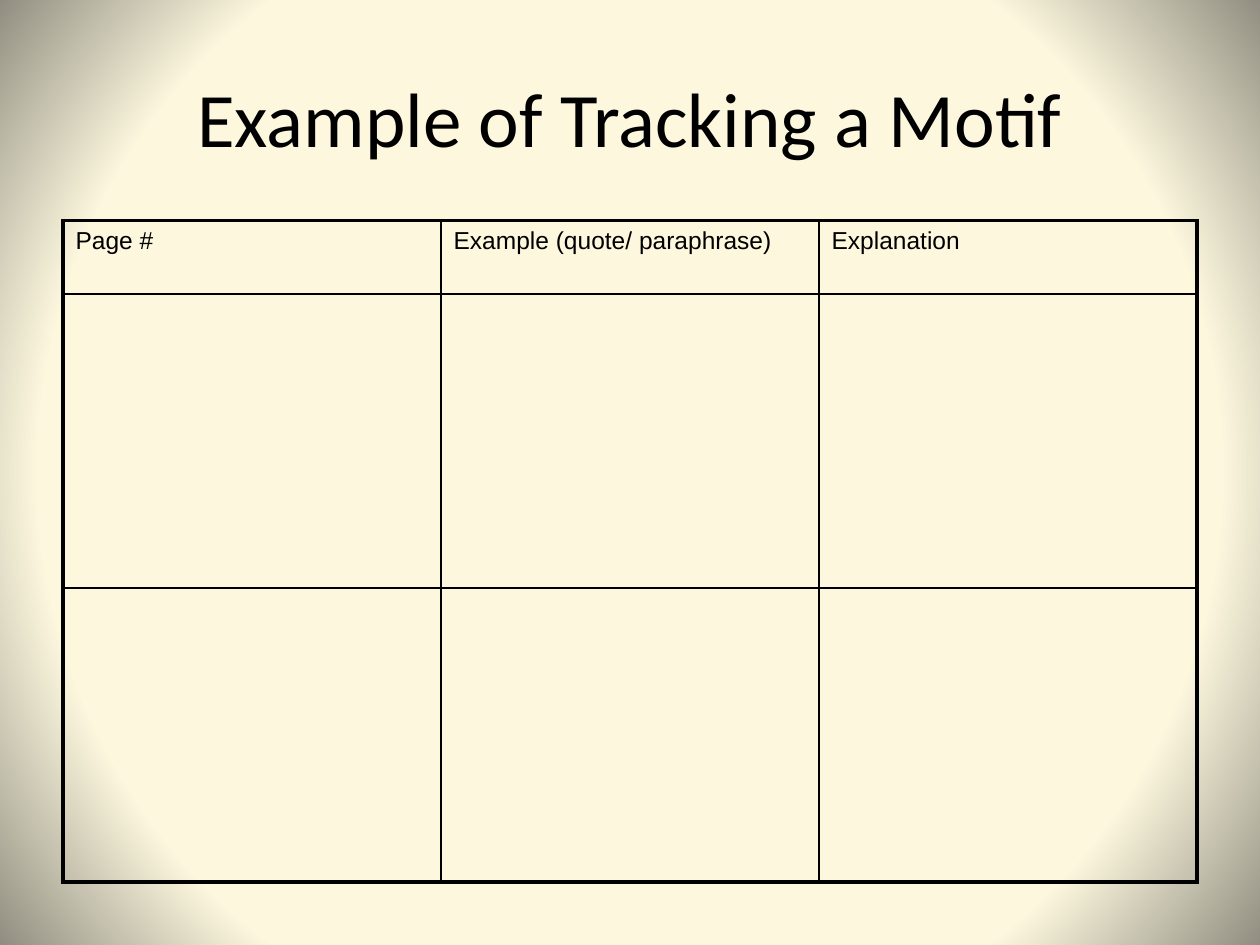
from lxml.etree import SubElement
from pptx import Presentation
from pptx.dml.color import RGBColor
from pptx.enum.text import MSO_ANCHOR, PP_ALIGN
from pptx.oxml import parse_xml
from pptx.oxml.ns import nsdecls, qn
from pptx.util import Pt

COLORS = {"ink": "000000", "cream": "FCF7DD", "vignette": "918E81"}
HEADINGS = ["Page #", "Example (quote/ paraphrase)", "Explanation"]
ROW_HEIGHTS = [42, 168, 168]
OUTER_LINE, INNER_LINE = 2.25, 1


def write_text(frame, text, font="Arial", size=14, color="ink",
               align=PP_ALIGN.LEFT, anchor=MSO_ANCHOR.TOP, before=0):
    frame.word_wrap = True
    frame.vertical_anchor = anchor
    paragraph = frame.paragraphs[0]
    paragraph.alignment = align
    paragraph.space_before = Pt(before)
    run = paragraph.add_run()
    run.text = text
    run.font.name = font
    run.font.size = Pt(size)
    run.font.color.rgb = RGBColor.from_string(COLORS[color])


def paint_background(slide):
    """Fill the slide with a circular gradient that darkens at the corners."""
    slide.background.fill.gradient()
    gradient = slide.element.find(".//" + qn("a:gradFill"))
    for part in list(gradient):
        gradient.remove(part)
    stops = SubElement(gradient, qn("a:gsLst"))
    for percent, color in [(0, "cream"), (75, "cream"), (100, "vignette")]:
        stop = SubElement(stops, qn("a:gs"), pos=str(percent * 1000))
        SubElement(stop, qn("a:srgbClr"), val=COLORS[color])
    circle = SubElement(gradient, qn("a:path"), path="circle")
    SubElement(circle, qn("a:fillToRect"), l="50000", t="50000", r="50000", b="50000")


def add_title(slide, left, top, width, height):
    title = slide.shapes.add_textbox(Pt(left), Pt(top), Pt(width), Pt(height))
    write_text(title.text_frame, "Example of Tracking a Motif", font="Calibri",
               size=44, align=PP_ALIGN.CENTER, anchor=MSO_ANCHOR.MIDDLE)


def set_borders(cell, widths):
    """Draw the cell's edges; widths maps L, R, T and B, in that order, to points."""
    properties = cell._tc.get_or_add_tcPr()
    for index, (side, width) in enumerate(widths.items()):
        properties.insert(index, parse_xml(
            f'<a:ln{side} {nsdecls("a")} w="{Pt(width)}"><a:solidFill>'
            f'<a:srgbClr val="{COLORS["ink"]}"/></a:solidFill></a:ln{side}>'))


def add_motif_table(slide, left, top, width, height):
    row_count, column_count = len(ROW_HEIGHTS), len(HEADINGS)
    table = slide.shapes.add_table(row_count, column_count, Pt(left), Pt(top),
                                   Pt(width), Pt(height)).table
    table.first_row = table.horz_banding = False
    for column in table.columns:
        column.width = Pt(width / column_count)
    for row, row_height in zip(table.rows, ROW_HEIGHTS):
        row.height = Pt(row_height)

    for r in range(row_count):
        for c in range(column_count):
            cell = table.cell(r, c)
            cell.fill.background()
            on_edge = {"L": c == 0, "R": c == column_count - 1,
                       "T": r == 0, "B": r == row_count - 1}
            set_borders(cell, {side: OUTER_LINE if outer else INNER_LINE
                               for side, outer in on_edge.items()})
    for c, heading in enumerate(HEADINGS):
        write_text(table.cell(0, c).text_frame, heading, before=2.8)


def main():
    deck = Presentation()
    deck.slide_width, deck.slide_height = Pt(720), Pt(540)
    slide = deck.slides.add_slide(deck.slide_layouts[6])
    paint_background(slide)
    add_title(slide, 36, 21.6, 648, 90)
    add_motif_table(slide, 36, 126, 648, sum(ROW_HEIGHTS))
    deck.save("out.pptx")


if __name__ == "__main__":
    main()
